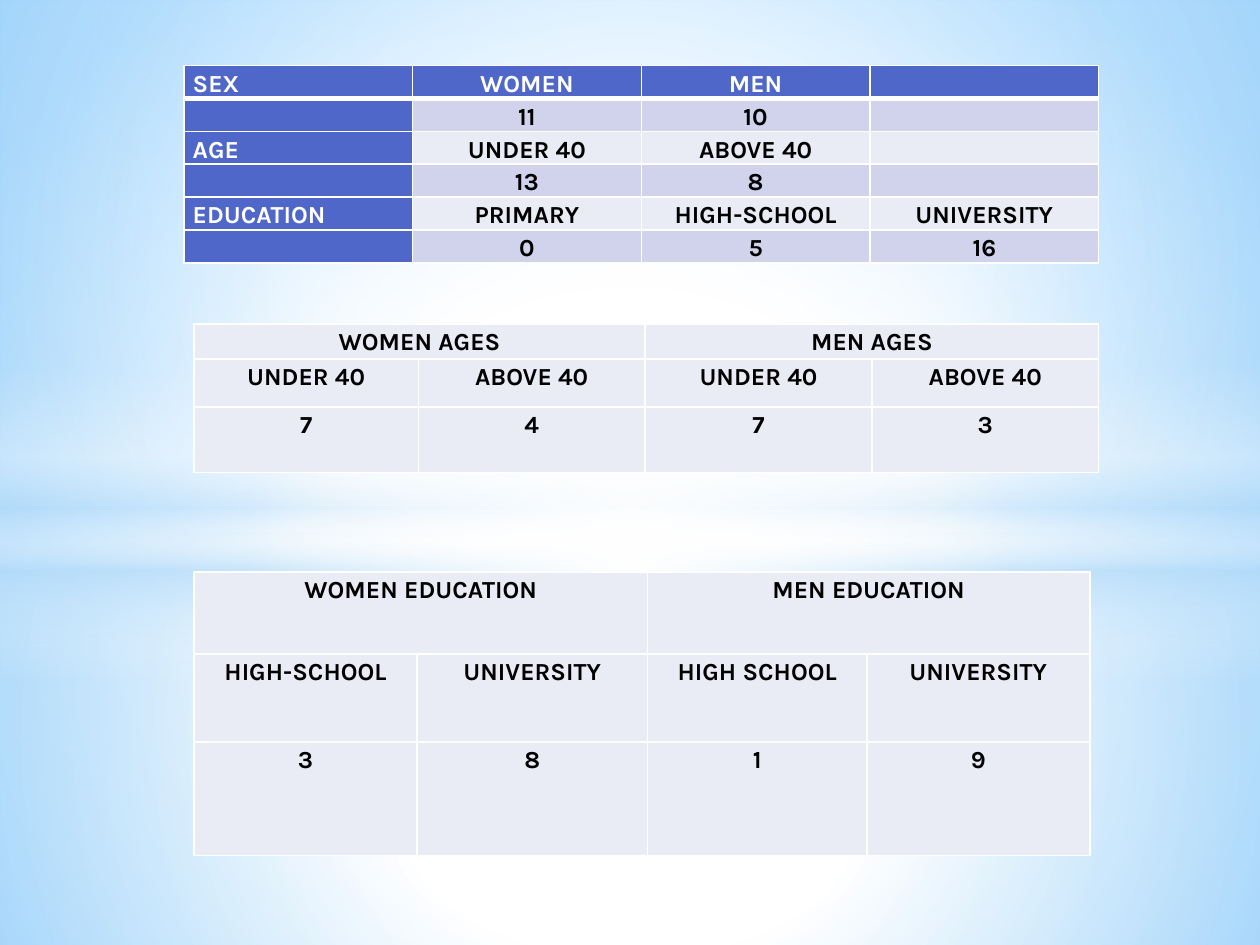
from lxml.etree import SubElement
from pptx import Presentation
from pptx.dml.color import RGBColor
from pptx.enum.shapes import MSO_SHAPE as Shape
from pptx.enum.text import PP_ALIGN as Align
from pptx.oxml.ns import qn
from pptx.util import Inches, Pt

BLUE, LAVENDER, PALE = "4E67C8", "D0D3EB", "E9EBF5"
WHITE, BLACK, SKY = "FFFFFF", "000000", "B4DCFA"


def color(value):
    return RGBColor.from_string(value)


def write(cell, text, font_color=BLACK, align=Align.CENTER, space_after=0):
    paragraph = cell.text_frame.paragraphs[0]
    paragraph.alignment = align
    paragraph.line_spacing = 1.15
    paragraph.space_after = Pt(space_after)
    if text:
        run = paragraph.add_run()
        run.text = text
        run.font.name = "Karla"
        run.font.size = Pt(14)
        run.font.bold = True
        run.font.color.rgb = color(font_color)
    else:
        # An empty cell keeps the text size, so its row stays low
        SubElement(paragraph._p, qn("a:endParaRPr"), sz="1400")


presentation = Presentation()
presentation.slide_width = Inches(10)
presentation.slide_height = Inches(7.5)
slide = presentation.slides.add_slide(presentation.slide_layouts[6])

# Backdrop: shape, box, gradient stops (position, colour, opacity), focus
# No shape means the slide background, no focus means top to bottom
center = (50, 50, 50, 50)
backdrop = [
    (None, None, [(0, WHITE, 100), (42, WHITE, 100), (100, "63BCFF", 100)], (24, 44, 24, 12)),
    (Shape.RECTANGLE, (0, 4.23, 10, 3.27),
     [(0, WHITE, 91), (37, WHITE, 76), (100, SKY, 79)], center),
    (Shape.RECTANGLE, (0, 0, 10, 4.23),
     [(0, WHITE, 89), (48, WHITE, 62), (100, SKY, 79)], center),
    (Shape.RECTANGLE, (0, 2.9, 10, 2.5),
     [(0, WHITE, 0), (29, WHITE, 30), (45, SKY, 40),
      (55, WHITE, 26), (65, SKY, 60), (100, WHITE, 0)], None),
    (Shape.OVAL, (0, 1.75, 10, 5.58), [(0, WHITE, 100), (54, WHITE, 0)], center),
]
for kind, box, stops, focus in backdrop:
    if kind is None:
        slide.background.fill.gradient()
        gradient = slide.element.xpath(".//p:bgPr/a:gradFill")[0]
    else:
        shape = slide.shapes.add_shape(kind, *map(Inches, box))
        shape.shadow.inherit = False
        shape.line.fill.background()
        shape.fill.gradient()
        gradient = shape.element.xpath("./p:spPr/a:gradFill")[0]
    for child in list(gradient):
        gradient.remove(child)
    stop_list = SubElement(gradient, qn("a:gsLst"))
    for position, value, opacity in stops:
        stop = SubElement(stop_list, qn("a:gs"), pos=str(position * 1000))
        stop_color = SubElement(stop, qn("a:srgbClr"), val=value)
        if opacity < 100:
            SubElement(stop_color, qn("a:alpha"), val=str(opacity * 1000))
    if focus:
        shade = SubElement(gradient, qn("a:path"), path="circle")
        sides = {side: str(share * 1000) for side, share in zip("ltrb", focus)}
        SubElement(shade, qn("a:fillToRect"), **sides)
    else:
        SubElement(gradient, qn("a:lin"), ang="5400000", scaled="0")

# Tables: left, top, column widths, row heights, side margin, has headers, rows
tables = [
    (1.46, 0.52, [1.815] * 4, [0.24] * 6, 0.07, True, [
        ["SEX", "WOMEN", "MEN", ""],
        ["", "11", "10", ""],
        ["AGE", "UNDER 40", "ABOVE 40", ""],
        ["", "13", "8", ""],
        ["EDUCATION", "PRIMARY", "HIGH-SCHOOL", "UNIVERSITY"],
        ["", "0", "5", "16"],
    ]),
    (1.54, 2.57, [1.78, 1.8, 1.8, 1.8], [0.28, 0.38, 0.52], 0.05, False, [
        ["WOMEN AGES", "", "MEN AGES", ""],
        ["UNDER 40", "ABOVE 40"] * 2,
        ["7", "4", "7", "3"],
    ]),
    (1.54, 4.54, [1.77, 1.83, 1.74, 1.77], [0.65, 0.7, 0.9], 0.05, False, [
        ["WOMEN EDUCATION", "", "MEN EDUCATION", ""],
        ["HIGH-SCHOOL", "UNIVERSITY", "HIGH SCHOOL", "UNIVERSITY"],
        ["3", "8", "1", "9"],
    ]),
]
for left, top, widths, heights, margin, has_headers, rows in tables:
    table = slide.shapes.add_table(
        len(heights), len(widths), Inches(left), Inches(top),
        Inches(sum(widths)), Inches(sum(heights))).table
    table.first_row = has_headers
    table.first_col = has_headers
    table.horz_banding = has_headers
    for column, width in zip(table.columns, widths):
        column.width = Inches(width)
    for row, height in zip(table.rows, heights):
        row.height = Inches(height)

    for i, texts in enumerate(rows):
        for j, text in enumerate(texts):
            cell = table.cell(i, j)
            cell.margin_left = cell.margin_right = Inches(margin)
            cell.margin_top = cell.margin_bottom = 0
            is_header = has_headers and (i == 0 or j == 0)

            # White borders, thick under the header row
            for side in "LRTB":
                thick = has_headers and (i, side) in [(0, "B"), (1, "T")]
                line = SubElement(cell._tc.get_or_add_tcPr(), qn(f"a:ln{side}"),
                                  w=str(Pt(3 if thick else 1)))
                line_fill = SubElement(line, qn("a:solidFill"))
                SubElement(line_fill, qn("a:srgbClr"), val=WHITE)

            cell.fill.solid()
            banded = has_headers and i % 2 == 1
            cell.fill.fore_color.rgb = color(
                BLUE if is_header else LAVENDER if banded else PALE)
            write(cell, text,
                  font_color=WHITE if is_header else BLACK,
                  align=Align.LEFT if has_headers and j == 0 else Align.CENTER,
                  space_after=0 if has_headers else 10)

    # Group titles span two columns each
    if not has_headers:
        for j in (0, 2):
            table.cell(0, j).merge(table.cell(0, j + 1))

presentation.save("out.pptx")
